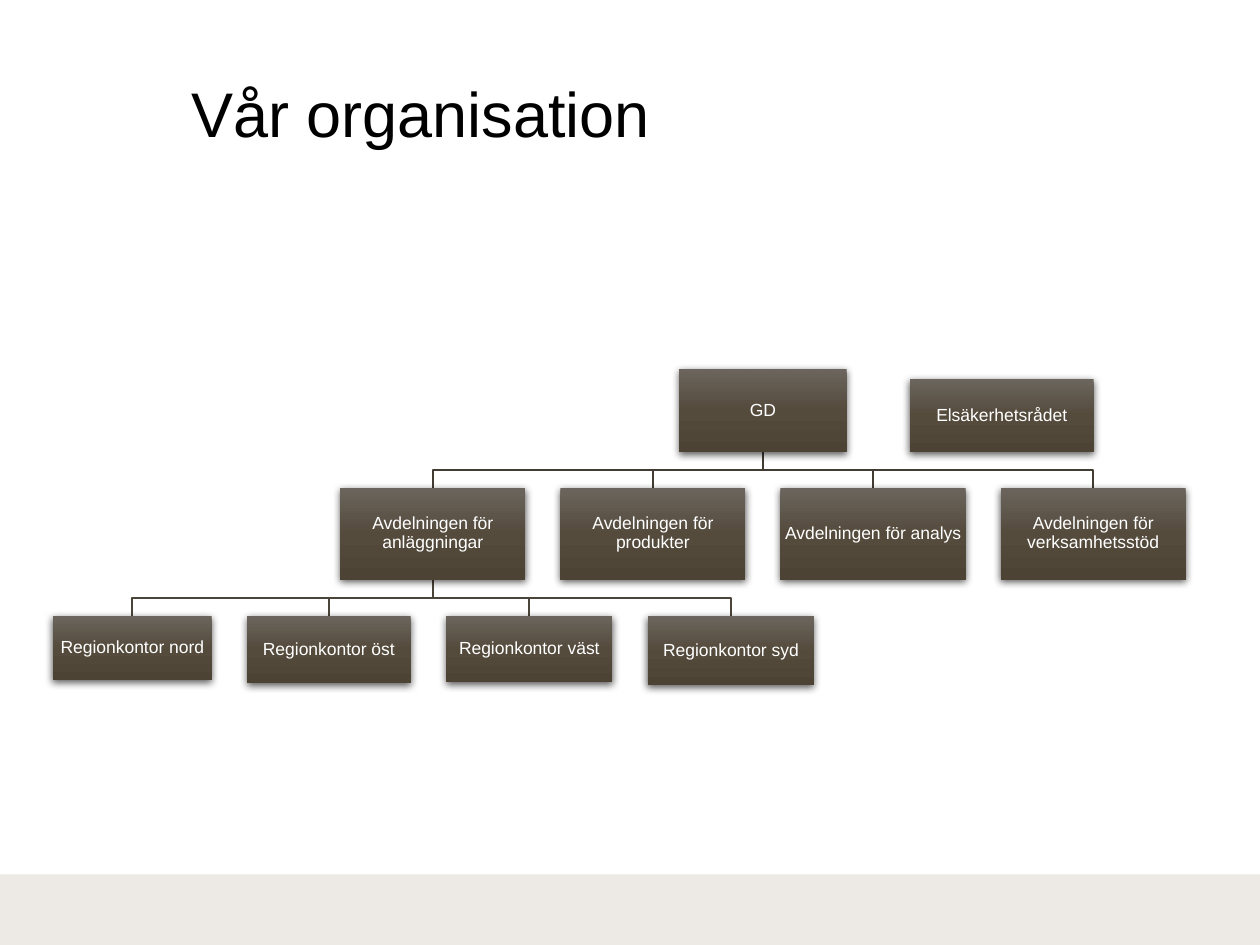
import dataclasses

import lxml.etree
import pptx
import pptx.dml.color
import pptx.enum.shapes
import pptx.enum.text
import pptx.oxml
import pptx.oxml.ns
import pptx.util

Inches = pptx.util.Inches
Pt = pptx.util.Pt
Align = pptx.enum.text.PP_ALIGN
Anchor = pptx.enum.text.MSO_ANCHOR
RECT = pptx.enum.shapes.MSO_SHAPE.RECTANGLE


@dataclasses.dataclass(frozen=True)
class Theme:
    font: str = "Arial"
    title: int = 36
    label: int = 10
    ink: str = "000000"
    light: str = "FFFFFF"
    band: str = "EDEAE5"
    grad: tuple = ((0, "6B655D"), (50, "544B3D"), (100, "4C4335"))
    upper: str = "423C32"
    lower: str = "4B4438"


THEME = Theme()


@dataclasses.dataclass(frozen=True)
class Box:
    left: float
    top: float
    width: float
    height: float

    @property
    def mid(self):
        return self.left + self.width / 2

    @property
    def base(self):
        return self.top + self.height

    def emu(self):
        return [Inches(v) for v in dataclasses.astuple(self)]


def color(code):
    return pptx.dml.color.RGBColor.from_string(code)


def write(shape, text, size, ink, anchor, inset=None):
    frame = shape.text_frame
    frame.word_wrap = True
    frame.auto_size = pptx.enum.text.MSO_AUTO_SIZE.NONE
    frame.vertical_anchor = anchor
    if inset is not None:
        frame.margin_left = frame.margin_right = Inches(inset)
        frame.margin_top = frame.margin_bottom = Inches(inset)
    para = frame.paragraphs[0]
    para.alignment = Align.CENTER
    para.line_spacing = 0.9
    run = para.add_run()
    run.text = text
    run.font.name = THEME.font
    run.font.size = Pt(size)
    run.font.color.rgb = color(ink)


def block(slide, box):
    """Add a plain rectangle without outline or shadow."""
    shape = slide.shapes.add_shape(RECT, *box.emu())
    shape.shadow.inherit = False
    shape.line.fill.background()
    return shape


def shade(shape):
    """Give a block the downward gradient and a soft shadow."""
    space = pptx.oxml.ns.nsdecls("a")
    stops = "".join(
        f'<a:gs pos="{pos * 1000}"><a:srgbClr val="{code}"/></a:gs>'
        for pos, code in THEME.grad)
    grad = pptx.oxml.parse_xml(
        f'<a:gradFill {space} rotWithShape="1"><a:gsLst>{stops}</a:gsLst>'
        '<a:lin ang="5400000" scaled="0"/></a:gradFill>')
    props = shape.element.spPr
    props.find(pptx.oxml.ns.qn("a:prstGeom")).addnext(grad)
    shadow = pptx.oxml.parse_xml(
        f'<a:outerShdw {space} blurRad="{Pt(4.5)}" dist="{Pt(1.5)}" '
        'dir="5400000" rotWithShape="0"><a:srgbClr val="000000">'
        '<a:alpha val="63000"/></a:srgbClr></a:outerShdw>')
    props.find(pptx.oxml.ns.qn("a:effectLst")).append(shadow)


def unit(slide, text, box):
    shape = block(slide, box)
    shade(shape)
    write(shape, text, size=THEME.label, ink=THEME.light,
          anchor=Anchor.MIDDLE, inset=0.01)


def branch(slide, head, child, ink):
    """Draw the elbow from the base of head to the top of child."""
    turn = (head.base + child.top) / 2
    points = [(head.mid, head.base), (head.mid, turn),
              (child.mid, turn), (child.mid, child.top)]
    points = [(Inches(x), Inches(y)) for x, y in points]
    path = slide.shapes.build_freeform(*points[0], scale=1.0)
    path.add_line_segments(points[1:], close=False)
    shape = path.convert_to_shape()
    shape.shadow.inherit = False
    shape.fill.background()
    shape.line.color.rgb = color(ink)
    shape.line.width = Pt(1)


def chart(slide, area):
    """Place the three levels of the organisation inside area."""
    def place(left, top, width, height):
        return Box(area.left + left, area.top + top, width, height)

    chief = place(4.97, 0, 1.33, 0.66)
    council = place(6.8, 0.08, 1.46, 0.58)
    names = ["anläggningar", "produkter", "analys", "verksamhetsstöd"]
    units = [(f"Avdelningen för {name}", place(2.28 + 1.747 * i, 0.94, 1.47, 0.73))
             for i, name in enumerate(names)]
    sites = [("nord", 0, 1.26, 0.51), ("öst", 1.54, 1.3, 0.53),
             ("väst", 3.12, 1.32, 0.52), ("syd", 4.72, 1.32, 0.55)]
    offices = [(f"Regionkontor {name}", place(left, 1.96, width, height))
               for name, left, width, height in sites]

    levels = [(chief, units, THEME.upper), (units[0][1], offices, THEME.lower)]
    for head, children, ink in levels:
        for _, child in children:
            branch(slide, head, child, ink)
    staff = [("GD", chief), ("Elsäkerhetsrådet", council)]
    for text, box in staff + units + offices:
        unit(slide, text, box)


def title(slide, box):
    shape = slide.shapes.title
    shape.left, shape.top, shape.width, shape.height = box.emu()
    write(shape, "Vår organisation", size=THEME.title, ink=THEME.ink,
          anchor=Anchor.TOP)


def footer(slide, box):
    band = block(slide, box)
    band.fill.solid()
    band.fill.fore_color.rgb = color(THEME.band)


def main():
    deck = pptx.Presentation()
    deck.slide_width, deck.slide_height = Inches(10), Inches(7.5)
    slide = deck.slides.add_slide(deck.slide_layouts[5])
    footer(slide, Box(0, 6.94, 10, 0.56))
    title(slide, Box(0.69, 0.61, 5.3, 1.45))
    chart(slide, Box(0.42, 2.93, 8.99, 2.51))
    deck.save("out.pptx")


if __name__ == "__main__":
    main()
